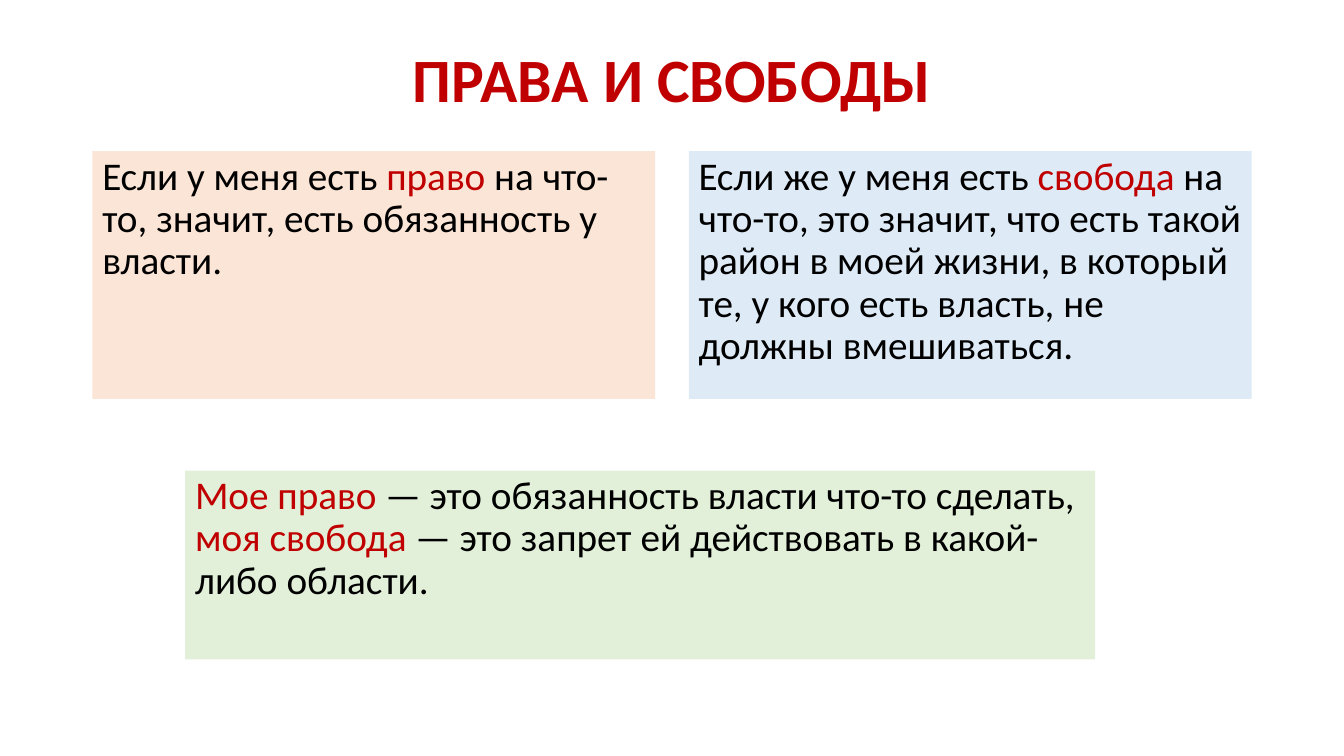
from pptx import Presentation
from pptx.dml.color import RGBColor
from pptx.enum.text import MSO_ANCHOR, PP_ALIGN
from pptx.util import Pt

COLORS = {
    "accent": "C00000",
    "text": "000000",
    "right": "FBE5D6",
    "freedom": "DEEBF7",
    "summary": "E2F0D9",
}
TITLE_FONT = {"name": "Calibri", "size": Pt(44), "bold": True}
BODY_FONT = {"name": "Calibri", "size": Pt(28), "bold": False}
TOP_FRAME = {"word_wrap": True, "vertical_anchor": MSO_ANCHOR.TOP}
MIDDLE_FRAME = {"word_wrap": True, "vertical_anchor": MSO_ANCHOR.MIDDLE}
LEFT_LINES = {"alignment": PP_ALIGN.LEFT, "line_spacing": 0.9, "space_before": Pt(0)}
CENTERED_LINES = {**LEFT_LINES, "alignment": PP_ALIGN.CENTER}


def apply_format(target, values):
    """Set each attribute of the target from a dict."""
    for attribute, value in values.items():
        setattr(target, attribute, value)


def place(part, box):
    """Move a part to a left, top, width, height box in points."""
    edges = ("left", "top", "width", "height")
    apply_format(part, dict(zip(edges, map(Pt, box))))


def add_phrase(paragraph, phrase, color, font):
    """Append one coloured phrase to a paragraph."""
    run = paragraph.add_run()
    run.text = phrase
    apply_format(run.font, font)
    run.font.color.rgb = RGBColor.from_string(COLORS[color])


def add_heading(slide, box, wording):
    """Place the centred slide title in its box."""
    heading = slide.shapes.title
    place(heading, box)
    apply_format(heading.text_frame, MIDDLE_FRAME)
    paragraph = heading.text_frame.paragraphs[0]
    apply_format(paragraph, CENTERED_LINES)
    add_phrase(paragraph, wording, "accent", TITLE_FONT)


def add_statement(slide, box, background, phrases):
    """Place a filled panel holding one statement in its box."""
    panel = slide.shapes.add_textbox(*map(Pt, box))
    panel.fill.solid()
    panel.fill.fore_color.rgb = RGBColor.from_string(COLORS[background])
    apply_format(panel.text_frame, TOP_FRAME)
    paragraph = panel.text_frame.paragraphs[0]
    apply_format(paragraph, LEFT_LINES)
    for phrase, color in phrases:
        add_phrase(paragraph, phrase, color, BODY_FONT)


def add_comparison(slide, box, statements):
    """Split the box into equal columns, one statement in each."""
    left, top, width, height = box
    gap = 24
    column = (width - gap * (len(statements) - 1)) / len(statements)
    for index, (background, phrases) in enumerate(statements):
        column_left = left + index * (column + gap)
        add_statement(slide, (column_left, top, column, height), background, phrases)


def main():
    """Build the slide on rights and freedoms."""
    deck = Presentation()
    deck.slide_width, deck.slide_height = Pt(960), Pt(540)
    slide = deck.slides.add_slide(deck.slide_layouts[5])
    add_heading(slide, (66, 28.75, 828, 61), "ПРАВА И СВОБОДЫ")
    right = [
        ("Если у меня есть ", "text"),
        ("право", "accent"),
        (" на что-то, значит, есть обязанность у власти.", "text"),
    ]
    freedom = [
        ("Если же у меня есть ", "text"),
        ("свобода", "accent"),
        (" на что-то, это значит, что есть такой район в моей жизни, "
         "в который те, у кого есть власть, не должны вмешиваться.", "text"),
    ]
    summary = [
        ("Мое право ", "accent"),
        ("— это обязанность власти что-то сделать, ", "text"),
        ("моя свобода", "accent"),
        (" — это запрет ей действовать в какой-либо области.", "text"),
    ]
    add_comparison(slide, (66, 108, 828, 177), [("right", right), ("freedom", freedom)])
    add_statement(slide, (132.25, 336.25, 650, 134.75), "summary", summary)
    deck.save("out.pptx")


if __name__ == "__main__":
    main()
